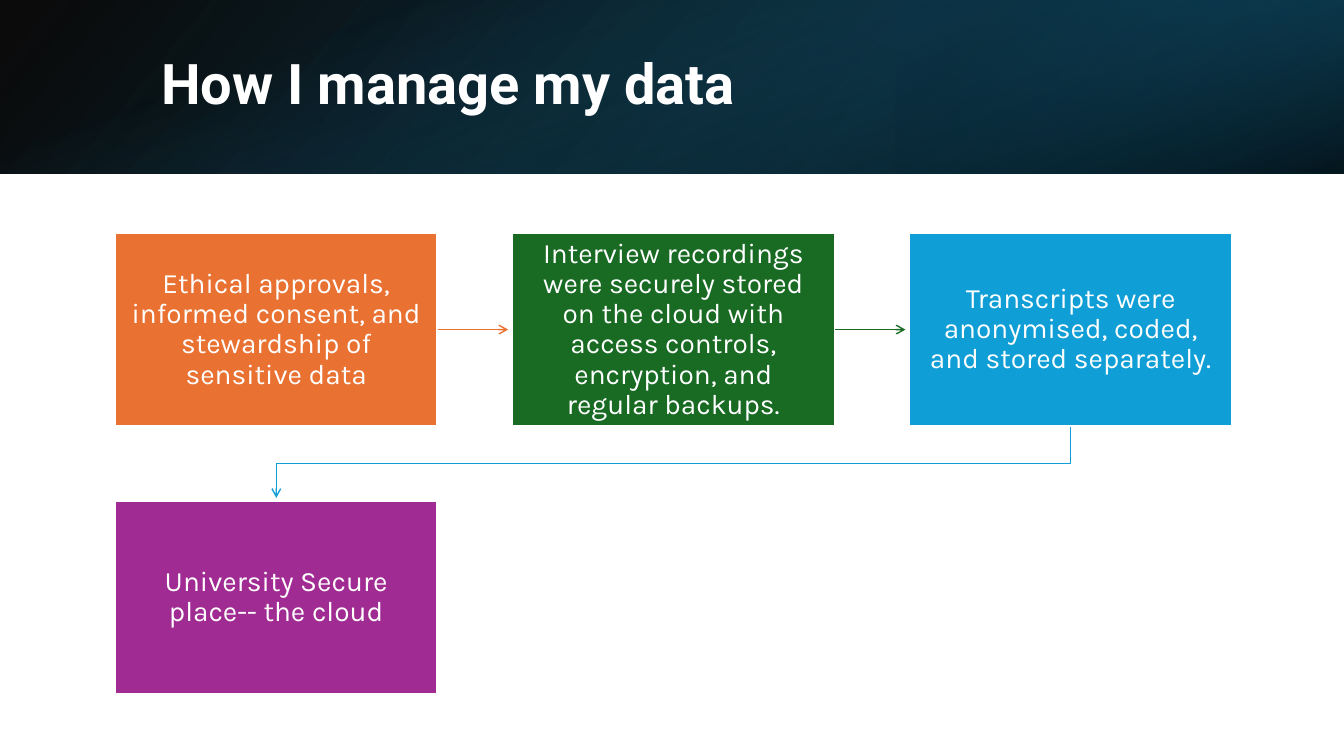
from dataclasses import dataclass

import pptx
import pptx.dml.color
import pptx.enum.shapes
import pptx.enum.text
import pptx.oxml
import pptx.oxml.ns
import pptx.util
from pptx.util import Inches

HUES = {
    "white": "FFFFFF",
    "black": "000000",
    "navy": "104862",
    "night": "0B3041",
    "teal": "156082",
    "orange": "E97132",
    "green": "196B24",
    "blue": "0F9ED5",
    "purple": "A02B93",
}
WIDE, HIGH = 13.33, 7.5
BAND = 1.72
LEFT, TOP = 1.14, 2.31
BOX_W, BOX_H = 3.2, 1.92
STEP_X, STEP_Y = 3.94, 2.66
REACH = 0.7
SHAPES = pptx.enum.shapes.MSO_SHAPE
ALIGN = pptx.enum.text.PP_ALIGN


@dataclass
class Stop:
    place: float
    hue: str
    alpha: int


@dataclass
class Band:
    x: float
    y: float
    w: float
    h: float
    turn: int
    flip: bool
    angle: int
    stops: tuple[Stop, Stop]


@dataclass
class Step:
    col: int
    row: int
    hue: str
    text: str

    @property
    def x(self) -> float:
        return LEFT + self.col * STEP_X

    @property
    def y(self) -> float:
        return TOP + self.row * STEP_Y


BANDS = [
    Band(0, 0, WIDE, BAND, 0, True, 140,
         (Stop(0, "black", 96), Stop(1, "navy", 100))),
    Band(WIDE * 2 / 3, 0, WIDE / 3, BAND, 180, True, 320,
         (Stop(0.19, "night", 68), Stop(1, "teal", 79))),
    Band((WIDE - BAND) / 2, (BAND - WIDE) / 2, BAND, WIDE, 90, False, 340,
         (Stop(0.23, "teal", 0), Stop(0.99, "black", 74))),
]
STEPS = [
    Step(0, 0, "orange",
         "Ethical approvals, informed consent, and stewardship of sensitive data"),
    Step(1, 0, "green",
         "Interview recordings were securely stored on the cloud with "
         "access controls, encryption, and regular backups."),
    Step(2, 0, "blue",
         "Transcripts were anonymised, coded, and stored separately."),
    Step(0, 1, "purple", "University Secure place-- the cloud"),
]


def tint(name: str) -> pptx.dml.color.RGBColor:
    return pptx.dml.color.RGBColor.from_string(HUES[name])


def add_tag(root, tag: str, **attrs: str):
    node = pptx.oxml.parse_xml(f"<{tag} {pptx.oxml.ns.nsdecls('a')}/>")
    for key, value in attrs.items():
        node.set(key, value)
    root.append(node)


def write(shape, text: str, *, size: float, font: str, bold: bool = False,
          align=ALIGN.LEFT, inset: float = 0.1, after: float = 0) -> None:
    frame = shape.text_frame
    frame.word_wrap = True
    frame.auto_size = pptx.enum.text.MSO_AUTO_SIZE.NONE
    frame.vertical_anchor = pptx.enum.text.MSO_ANCHOR.MIDDLE
    frame.margin_left = frame.margin_right = Inches(inset)
    frame.margin_top = frame.margin_bottom = Inches(inset)
    para = frame.paragraphs[0]
    para.alignment = align
    para.line_spacing = 0.9
    para.space_before = pptx.util.Pt(0)
    para.space_after = pptx.util.Pt(after)
    run = para.add_run()
    run.text = text
    run.font.size = pptx.util.Pt(size)
    run.font.name = font
    run.font.bold = bold
    run.font.color.rgb = tint("white")


def draw_rect(slide, x: float, y: float, w: float, h: float):
    shape = slide.shapes.add_shape(
        SHAPES.RECTANGLE, Inches(x), Inches(y), Inches(w), Inches(h))
    shape.shadow.inherit = False
    return shape


def draw_band(slide, band: Band) -> None:
    shape = draw_rect(slide, band.x, band.y, band.w, band.h)
    shape.rotation = band.turn
    shape.line.fill.background()
    if band.flip:
        shape._element.spPr.xfrm.set("flipH", "1")
    shape.fill.gradient()
    shape.fill.gradient_angle = 360 - band.angle
    for mark, stop in zip(shape.fill.gradient_stops, band.stops):
        mark.position = stop.place
        mark.color.rgb = tint(stop.hue)
    nodes = shape._element.spPr.findall(".//" + pptx.oxml.ns.qn("a:srgbClr"))
    for node, stop in zip(nodes, band.stops):
        add_tag(node, "a:alpha", val=str(stop.alpha * 1000))


def draw_step(slide, step: Step):
    shape = draw_rect(slide, step.x, step.y, BOX_W, BOX_H)
    shape.fill.solid()
    shape.fill.fore_color.rgb = tint(step.hue)
    shape.line.color.rgb = tint("white")
    shape.line.width = pptx.util.Pt(1.5)
    write(shape, step.text, size=20, font="Karla", align=ALIGN.CENTER,
          inset=0.16, after=7)
    return shape


def style_line(shape, hue: str) -> None:
    shape.line.color.rgb = tint(hue)
    shape.line.width = pptx.util.Pt(1)
    add_tag(shape.line._get_or_add_ln(), "a:tailEnd", type="arrow")


def draw_arrow(slide, step: Step, box) -> None:
    x, y = step.x + BOX_W, step.y + BOX_H / 2
    arrow = slide.shapes.add_connector(
        pptx.enum.shapes.MSO_CONNECTOR.STRAIGHT,
        Inches(x), Inches(y), Inches(x + REACH), Inches(y))
    arrow.begin_connect(box, 3)
    style_line(arrow, step.hue)
    add_tag(arrow._element.spPr, "a:effectLst")


def draw_bend(slide, start: Step, end: Step) -> None:
    x, y = start.x + BOX_W / 2, start.y + BOX_H
    goal, mid = end.x + BOX_W / 2, (y + end.y) / 2
    path = slide.shapes.build_freeform(Inches(x), Inches(y))
    path.add_line_segments(
        [(Inches(a), Inches(b)) for a, b in
         [(x, mid), (goal, mid), (goal, end.y - 0.03)]], close=False)
    shape = path.convert_to_shape()
    shape.shadow.inherit = False
    shape.fill.background()
    style_line(shape, start.hue)


def main() -> None:
    deck = pptx.Presentation()
    deck.slide_width, deck.slide_height = Inches(WIDE), Inches(HIGH)
    slide = deck.slides.add_slide(deck.slide_layouts[5])
    for band in BANDS:
        draw_band(slide, band)
    title = slide.shapes.title
    title.left, title.top = Inches(1.5), Inches(0.38)
    title.width, title.height = Inches(10.98), Inches(0.96)
    write(title, "How I manage my data", size=40, font="Roboto", bold=True)
    slide.shapes._spTree.append(title._element)
    draw_bend(slide, STEPS[2], STEPS[3])
    boxes = [draw_step(slide, step) for step in STEPS]
    for step, box in zip(STEPS[:2], boxes):
        draw_arrow(slide, step, box)
    deck.save("out.pptx")


if __name__ == "__main__":
    main()
